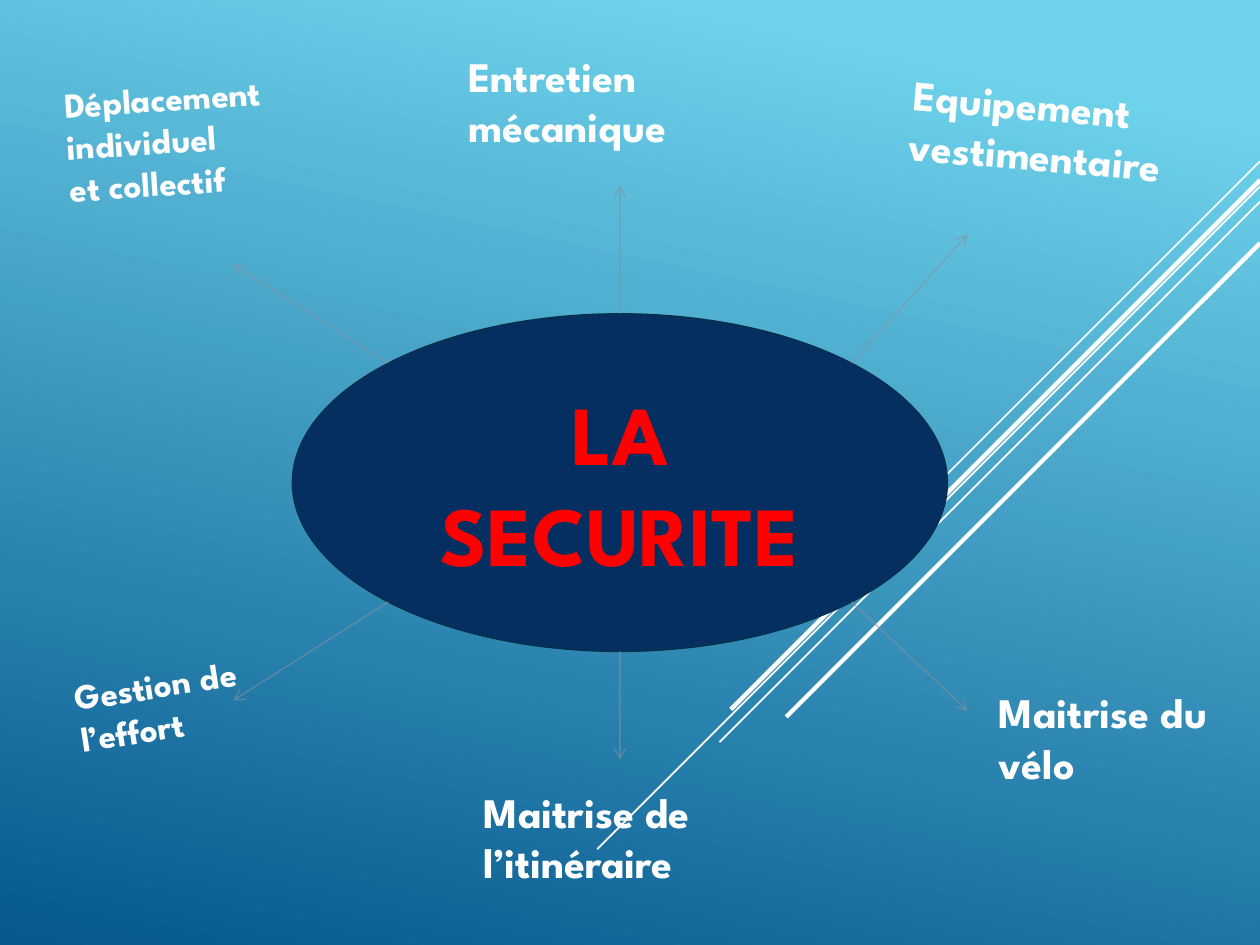
from dataclasses import dataclass
from math import cos, radians, sin

from lxml.etree import SubElement
from pptx import Presentation
from pptx.dml.color import RGBColor
from pptx.enum.shapes import MSO_CONNECTOR as Connector, MSO_SHAPE as Shape
from pptx.enum.text import MSO_ANCHOR as Anchor, MSO_AUTO_SIZE as AutoSize, PP_ALIGN as Align
from pptx.oxml.ns import qn
from pptx.util import Inches, Pt

COLUMNS, ROWS = 100, 75


@dataclass(frozen=True)
class Theme:
    font: str = "League Spartan"
    sky: str = "6ED2EB"
    deep: str = "06588E"
    oval: str = "052F61"
    oval_edge: str = "043148"
    arrow: str = "89919C"
    title: str = "FF0000"
    text: str = "FFFFFF"
    title_size: int = 48
    label_size: int = 24
    small_size: int = 20
    thin: float = 1
    thick: float = 2.5
    arrow_width: float = 0.75


def color(code):
    return RGBColor.from_string(code)


def write(frame, text, *, font, size, fill, align=Align.LEFT, anchor=Anchor.TOP):
    frame.word_wrap = True
    frame.vertical_anchor = anchor
    frame.text = text
    for paragraph in frame.paragraphs:
        paragraph.alignment = align
        style = paragraph.runs[0].font
        style.name, style.size, style.bold = font, Pt(size), True
        style.color.rgb = color(fill)


class SlideBuilder:
    def __init__(self, presentation, theme):
        self.theme = theme
        self.column = presentation.slide_width / COLUMNS
        self.row = presentation.slide_height / ROWS
        self.slide = presentation.slides.add_slide(presentation.slide_layouts[6])

    def place(self, *lengths):
        units = (self.column, self.row) * 2
        return [round(length * unit) for length, unit in zip(lengths, units)]

    def background(self):
        fill = self.slide.background.fill
        fill.gradient()
        fill.gradient_angle = 360 - 102
        stops = zip(fill.gradient_stops, (0.1, 1), (self.theme.sky, self.theme.deep))
        for stop, position, code in stops:
            stop.position = position
            stop.color.rgb = color(code)

    def line(self, start, end, code, width):
        connector = self.slide.shapes.add_connector(
            Connector.STRAIGHT, *self.place(*start, *end))
        connector.line.color.rgb = color(code)
        connector.line.width = Pt(width)
        SubElement(connector._element.spPr, qn("a:effectLst"))
        return connector

    def arrow(self, start, end):
        connector = self.line(start, end, self.theme.arrow, self.theme.arrow_width)
        outline = connector.line._get_or_add_ln()
        shade = outline.find(f"{qn('a:solidFill')}/{qn('a:srgbClr')}")
        SubElement(shade, qn("a:alpha"), val="60000")
        SubElement(outline, qn("a:tailEnd"), type="arrow")

    def oval(self, box, text):
        shape = self.slide.shapes.add_shape(Shape.OVAL, *self.place(*box))
        shape.shadow.inherit = False
        shape.fill.solid()
        shape.fill.fore_color.rgb = color(self.theme.oval)
        shape.line.color.rgb = color(self.theme.oval_edge)
        write(shape.text_frame, text, font=self.theme.font, size=self.theme.title_size,
              fill=self.theme.title, align=Align.CENTER, anchor=Anchor.MIDDLE)

    def label(self, text, box, size, rotation=0):
        shape = self.slide.shapes.add_textbox(*self.place(*box))
        shape.rotation = rotation
        write(shape.text_frame, text, font=self.theme.font, size=size, fill=self.theme.text)
        shape.text_frame.auto_size = AutoSize.SHAPE_TO_FIT_TEXT


def main():
    theme = Theme()
    presentation = Presentation()
    presentation.slide_width, presentation.slide_height = Inches(10), Inches(7.5)
    builder = SlideBuilder(presentation, theme)
    builder.background()

    diagonals = [
        (12.8, 34.3, theme.thin),
        (14.8, 52.6, theme.thin),
        (16, 42.9, theme.thin),
        (14.3, 42, theme.thick),
        (19.3, 37.6, theme.thick),
    ]
    for top, run, width in diagonals:
        builder.line((COLUMNS, top), (COLUMNS - run, top + run), theme.text, width)

    left, top, width, height = oval_box = (23.2, 24.9, 52, 26.8)
    builder.oval(oval_box, "LA SECURITE")

    arrow_tips = {
        -45: (76.8, 18.6),
        45: (76.8, 56.4),
        135: (18.5, 55.6),
        225: (18.5, 21),
        270: (49.2, 14.7),
        90: (49.2, 60.3),
    }
    for angle, tip in arrow_tips.items():
        start = (left + width / 2 * (1 + cos(radians(angle))),
                 top + height / 2 * (1 + sin(radians(angle))))
        builder.arrow(start, tip)

    labels = [
        ("Entretien mécanique", (36.2, 3.5, 27.6, 9.1), theme.label_size, 0),
        ("Equipement vestimentaire", (71.3, 6, 26.8, 9.1), theme.label_size, 5),
        ("Maitrise du vélo", (78.3, 54, 19.7, 9.1), theme.label_size, 0),
        ("Maitrise de l’itinéraire", (37.4, 61.9, 28.3, 9.1), theme.label_size, 0),
        ("Gestion de l’effort", (5.1, 51.7, 20.9, 7.7), theme.small_size, -8.8),
        ("Déplacement individuel\net collectif", (4.3, 5.3, 26.8, 11.1), theme.small_size, -3.8),
    ]
    for label in labels:
        builder.label(*label)

    presentation.save("out.pptx")


if __name__ == "__main__":
    main()
